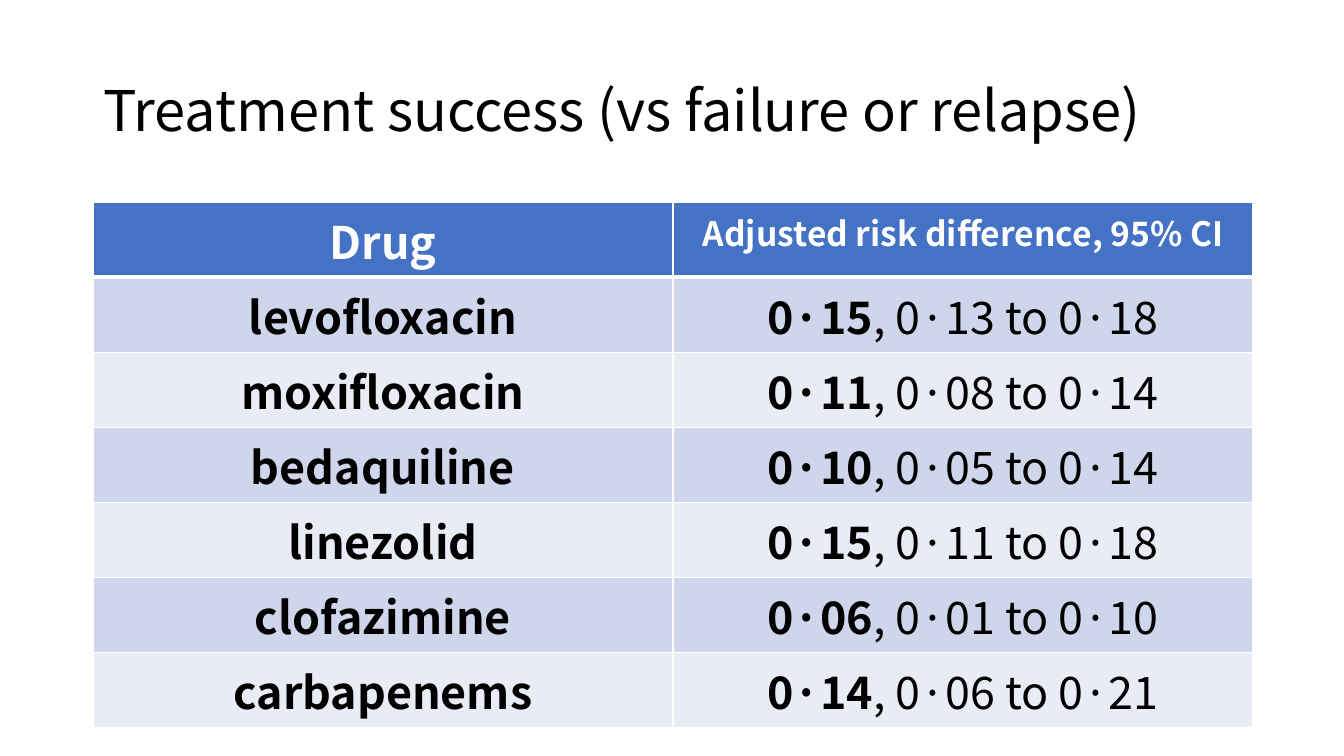
from lxml.etree import SubElement
from pptx import Presentation
from pptx.dml.color import RGBColor
from pptx.enum.text import MSO_ANCHOR, MSO_AUTO_SIZE, PP_ALIGN
from pptx.oxml.ns import qn
from pptx.util import Emu, Pt

TITLE = "Treatment success (vs failure or relapse)"
DRUG_HEADING = "Drug"
RISK_HEADING = "Adjusted risk difference, 95% CI"
DRUG_RESULTS = [
    ("levofloxacin", "0·15", "0·13 to 0·18"),
    ("moxifloxacin", "0·11", "0·08 to 0·14"),
    ("bedaquiline", "0·10", "0·05 to 0·14"),
    ("linezolid", "0·15", "0·11 to 0·18"),
    ("clofazimine", "0·06", "0·01 to 0·10"),
    ("carbapenems", "0·14", "0·06 to 0·21"),
]


def px(length):
    return Emu(round(length * 914400 / 100.8))


def color(hex_string):
    return RGBColor.from_string(hex_string)


class SlideBuilder:
    font_name = "Noto Sans CJK KR"
    ink, white, header_fill = "000000", "FFFFFF", "4472C4"
    band_fills = ("CFD5EA", "E9EBF5")

    def __init__(self, slide):
        self.slide = slide

    def add_run(self, paragraph, text, size, ink, bold):
        run = paragraph.add_run()
        run.text = text
        style = {"name": self.font_name, "size": Pt(size), "bold": bold}
        for attribute, value in style.items():
            setattr(run.font, attribute, value)
        run.font.color.rgb = color(ink)

    def title(self, text, left, top, width, height):
        heading = self.slide.shapes.title
        place = {"left": left, "top": top, "width": width, "height": height}
        for attribute, value in place.items():
            setattr(heading, attribute, px(value))
        frame = heading.text_frame
        layout = {"word_wrap": True, "auto_size": MSO_AUTO_SIZE.NONE,
                  "vertical_anchor": MSO_ANCHOR.MIDDLE}
        for attribute, value in layout.items():
            setattr(frame, attribute, value)
        paragraph = frame.paragraphs[0]
        paragraph.alignment = PP_ALIGN.LEFT
        paragraph.line_spacing = 0.9
        self.add_run(paragraph, text, 40, self.ink, False)

    def borders(self, cell, top, bottom):
        """Draw white cell borders; top and bottom are widths in points."""
        properties = cell._tc.get_or_add_tcPr()
        for tag, width in (("lnL", 1), ("lnR", 1), ("lnT", top), ("lnB", bottom)):
            line = SubElement(properties, qn(f"a:{tag}"), w=str(Pt(width)))
            fill = SubElement(line, qn("a:solidFill"))
            SubElement(fill, qn("a:srgbClr"), val=self.white)

    def cell(self, cell, runs, fill, ink, top=1, bottom=1):
        """Fill a cell with runs given as (text, size, bold)."""
        self.borders(cell, top, bottom)
        cell.fill.solid()
        cell.fill.fore_color.rgb = color(fill)
        paragraph = cell.text_frame.paragraphs[0]
        paragraph.alignment = PP_ALIGN.CENTER
        for text, size, bold in runs:
            self.add_run(paragraph, text, size, ink, bold)

    def results_table(self, results, left, top, column_width, row_height):
        row_count = len(results) + 1
        table = self.slide.shapes.add_table(
            row_count, 2, px(left), px(top),
            px(2 * column_width), px(row_count * row_height)).table
        for column in table.columns:
            column.width = px(column_width)
        for row in table.rows:
            row.height = px(row_height)

        for column, (heading, size) in enumerate([(DRUG_HEADING, 32), (RISK_HEADING, 24)]):
            self.cell(table.cell(0, column), [(heading, size, True)],
                      self.header_fill, self.white, bottom=3)
        for row, (drug, difference, interval) in enumerate(results, start=1):
            fill = self.band_fills[(row - 1) % 2]
            top_border = 3 if row == 1 else 1
            contents = ([(drug, 32, True)],
                        [(difference, 32, True), (f", {interval}", 32, False)])
            for column, runs in enumerate(contents):
                self.cell(table.cell(row, column), runs, fill, self.ink, top=top_border)


def main():
    presentation = Presentation()
    presentation.slide_width, presentation.slide_height = px(1344), px(756)
    title_only = presentation.slide_layouts[5]
    builder = SlideBuilder(presentation.slides.add_slide(title_only))
    builder.title(TITLE, 93, 40, 1160, 146)
    builder.results_table(DRUG_RESULTS, 93, 202, 580, 75)
    presentation.save("out.pptx")


if __name__ == "__main__":
    main()
